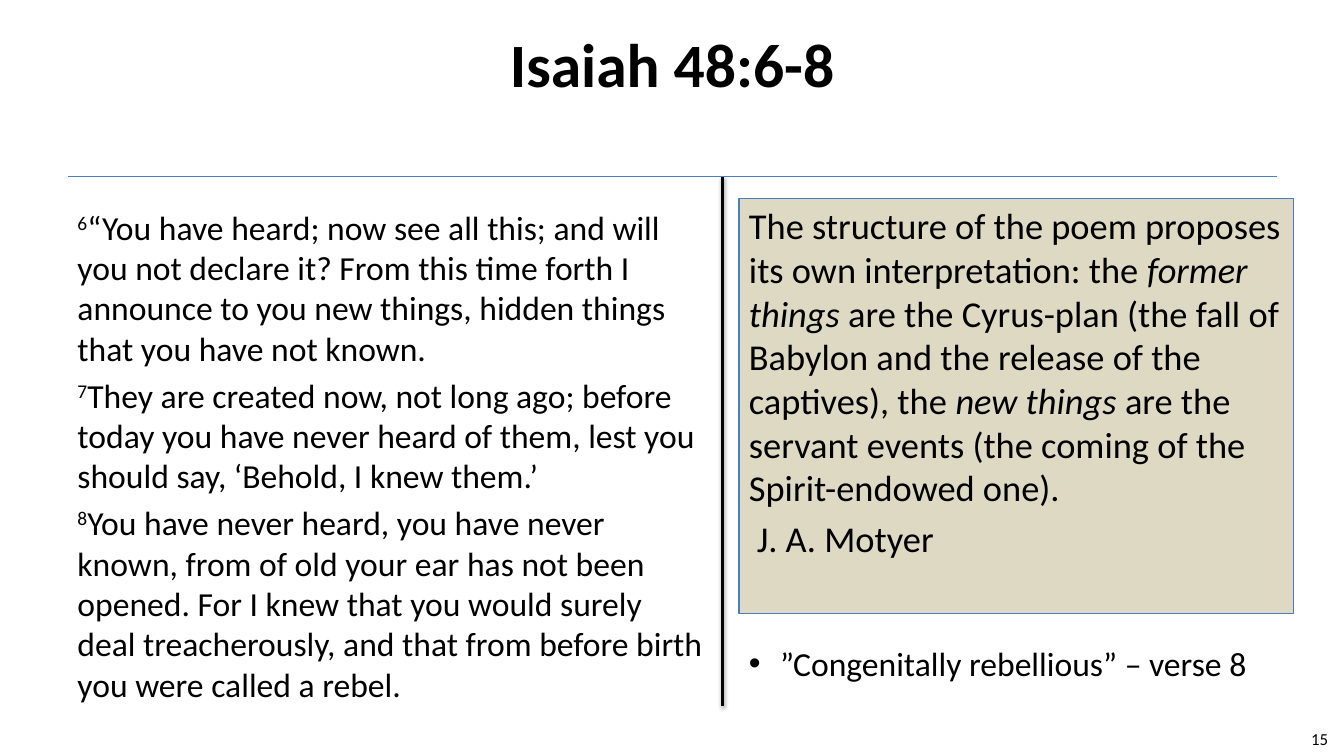
from lxml.etree import SubElement as Sub
from pptx import Presentation
from pptx.dml.color import RGBColor as RGB
from pptx.enum.shapes import MSO_CONNECTOR as Conn, MSO_SHAPE as Kind
from pptx.enum.text import MSO_ANCHOR as Anchor, PP_ALIGN as Align
from pptx.oxml.ns import qn
from pptx.util import Inches, Pt

BLACK, BLUE, TAN = "000000", "4B7EBC", "DDD9C3"

TITLE = [[("Isaiah 48:6-8", "bold")]]
VERSES = [
    [("6", "super"), ("“You have heard; now see all this; and will you not declare it? "
                      "From this time forth I announce to you new things, hidden things "
                      "that you have not known.", "")],
    [("7", "super"), ("They are created now, not long ago; before today you have never "
                      "heard of them, lest you should say, ‘Behold, I knew them.’", "")],
    [("8", "super"), ("You have never heard, you have never known, from of old your ear "
                      "has not been opened. For I knew that you would surely deal "
                      "treacherously, and that from before birth you were called a rebel.", "")],
]
QUOTE = [
    [("The structure of the poem proposes its own interpretation: the ", ""),
     ("former things", "italic"),
     (" are the Cyrus-plan (the fall of Babylon and the release of the captives), the ", ""),
     ("new things", "italic"),
     (" are the servant events (the coming of the Spirit-endowed one).", "")],
    [("J. A. Motyer", "")],
]
NOTE = [[("”Congenitally rebellious” – verse 8", "")]]
PAGE = [[("15", "")]]

LEFT, WIDE, RULE = 0.67, 12, 1.75
SPLIT, SIDE, HALF = 7.17, 7.33, 5.5
FRAME = {"word_wrap": True, "margin_left": Inches(0.1), "margin_right": Inches(0.1),
         "margin_top": Inches(0.05), "margin_bottom": Inches(0.05)}


def color(code):
    """Turn a hex string into a colour."""
    return RGB.from_string(code)


def indent(para, left, first=0):
    """Set the left margin and first-line indent of a paragraph."""
    props = para._p.get_or_add_pPr()
    props.set("marL", str(Inches(left)))
    props.set("indent", str(Inches(first)))
    return props


def write(shape, paras, size, align=Align.LEFT, anchor=Anchor.TOP):
    """Fill a shape with paragraphs of styled runs."""
    frame = shape.text_frame
    for name, value in {**FRAME, "vertical_anchor": anchor}.items():
        setattr(frame, name, value)
    for i, runs in enumerate(paras):
        para = frame.add_paragraph() if i else frame.paragraphs[0]
        para.alignment = align
        para.space_before = Pt(0.2 * size if i else 0)
        for text, style in runs:
            run = para.add_run()
            run.text = text
            font = {"name": "Calibri", "size": Pt(size),
                    "bold": style == "bold", "italic": style == "italic"}
            for name, value in font.items():
                setattr(run.font, name, value)
            run.font.color.rgb = color(BLACK)
            if style == "super":
                run._r.get_or_add_rPr().set("baseline", "30000")
    return frame.paragraphs


def box(slide, spot, *text):
    """Add a text box at a spot and write in it."""
    return write(slide.shapes.add_textbox(*map(Inches, spot)), *text)


def line(slide, ends, code, width):
    """Draw a straight line and return its empty effect list."""
    rule = slide.shapes.add_connector(Conn.STRAIGHT, *map(Inches, ends))
    rule.line.color.rgb = color(code)
    rule.line.width = Pt(width)
    return Sub(rule._element.spPr, qn("a:effectLst"))


def main():
    """Build the slide and save it."""
    deck = Presentation()
    deck.slide_width, deck.slide_height = Inches(13.33), Inches(7.5)
    slide = deck.slides.add_slide(deck.slide_layouts[6])

    box(slide, (LEFT, 0, WIDE, 1.25), TITLE, 44, Align.CENTER, Anchor.MIDDLE)
    box(slide, (LEFT, 2, 6.42, 5.13), VERSES, 24)

    card = slide.shapes.add_shape(Kind.RECTANGLE, *map(Inches, (SIDE, 1.97, HALF, 4.12)))
    card.shadow.inherit = False
    card.fill.solid()
    card.fill.fore_color.rgb = color(TAN)
    card.line.color.rgb = color(BLUE)
    card.line.width = Pt(0.75)
    indent(write(card, QUOTE, 26)[-1], 0.08)

    box(slide, (12.27, 7.13, 1, 0.4), PAGE, 12, Align.RIGHT, Anchor.MIDDLE)

    glow = line(slide, (SPLIT, RULE, SPLIT, 7), BLACK, 2)
    shade = Sub(glow, qn("a:outerShdw"), blurRad=str(Pt(3.1)), dist=str(Pt(1.6)),
                dir="5400000", rotWithShape="0")
    tint = Sub(shade, qn("a:srgbClr"), val=BLACK)
    Sub(tint, qn("a:alpha"), val="38000")
    line(slide, (LEFT, RULE, LEFT + WIDE, RULE), BLUE, 0.75)

    note = box(slide, (SIDE, 6.33, HALF, 0.5), NOTE, 24)[0]
    props = indent(note, 0.31, -0.31)
    Sub(props, qn("a:buFont"), typeface="Arial")
    Sub(props, qn("a:buChar"), char="•")

    deck.save("out.pptx")


if __name__ == "__main__":
    main()
